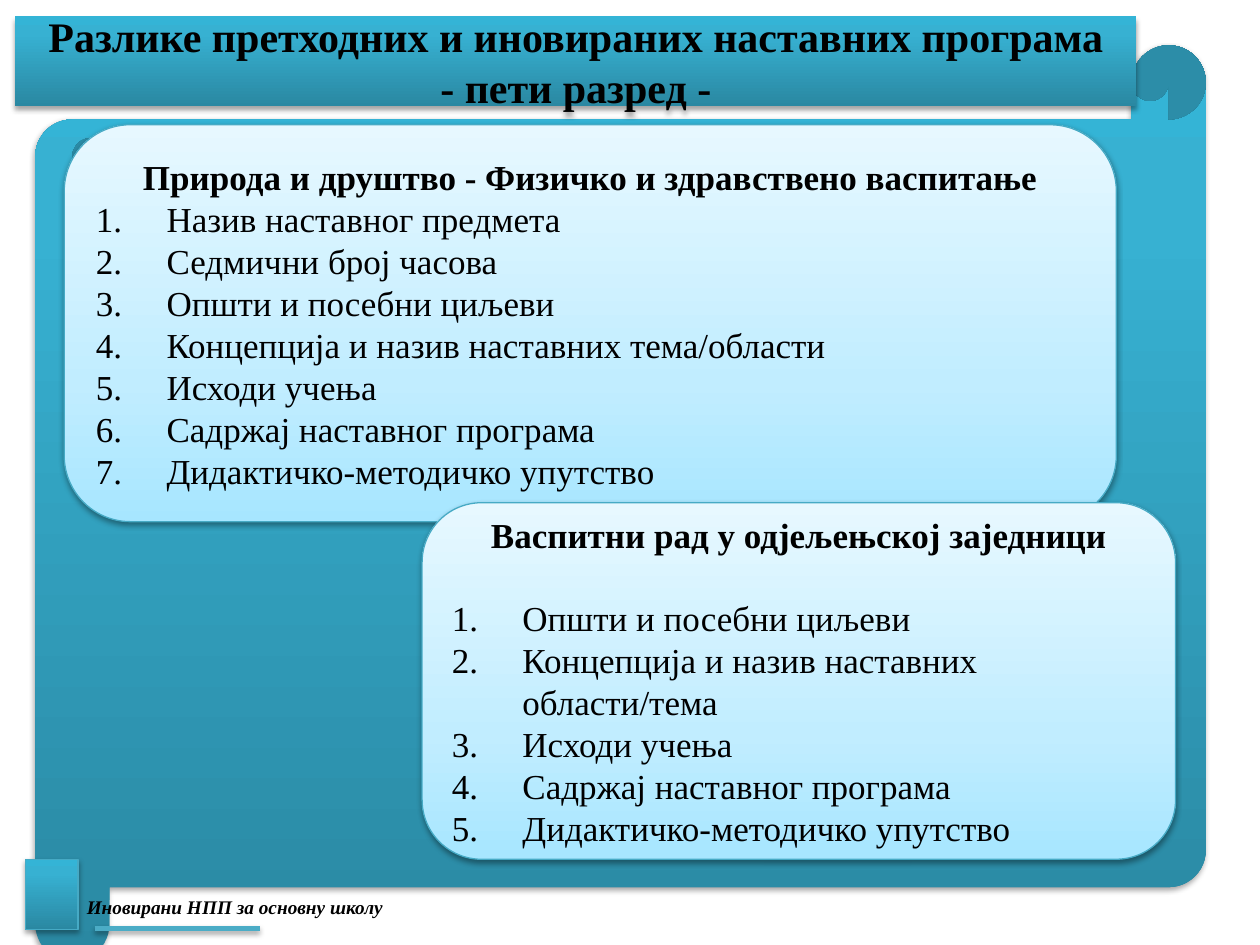
from dataclasses import dataclass

from lxml import etree
from pptx import Presentation
from pptx.dml.color import RGBColor
from pptx.enum.shapes import MSO_CONNECTOR, MSO_SHAPE
from pptx.enum.text import MSO_ANCHOR, MSO_AUTO_SIZE, PP_ALIGN
from pptx.oxml.ns import qn
from pptx.util import Inches, Pt

SCROLL = MSO_SHAPE.HORIZONTAL_SCROLL
RECT = MSO_SHAPE.RECTANGLE
ROUND = MSO_SHAPE.ROUNDED_RECTANGLE
STRAIGHT = MSO_CONNECTOR.STRAIGHT
MIDDLE = MSO_ANCHOR.MIDDLE
NO_FIT = MSO_AUTO_SIZE.NONE
GROW = MSO_AUTO_SIZE.SHAPE_TO_FIT_TEXT
LEFT, CENTER = PP_ALIGN.LEFT, PP_ALIGN.CENTER

FONT = "Times New Roman"
INDENT = Inches(0.56)
COLORS = {
    "text": "000000",
    "edge": "46AAC5",
    "rule": "4BACC6",
    "deep": "2A88A2",
    "mid": "37B1D2",
    "top": "34B4D6",
    "ice": "A7E6FF",
    "pale": "C1EDFF",
    "white": "E7F8FF",
}
TEAL = ((0, "deep"), (80, "mid"), (100, "top"))
LIGHT = ((0, "ice"), (35, "pale"), (100, "white"))


@dataclass
class Card:
    box: tuple[float, float, float, float]
    head: str
    gap: float
    items: list[str]


CARDS = [
    Card((0.51, 0.99, 8.35, 3.15),
         "Природа и друштво - Физичко и здравствено васпитање", 0,
         ["Назив наставног предмета",
          "Седмични број часова",
          "Општи и посебни циљеви",
          "Концепција и назив наставних тема/области",
          "Исходи учења",
          "Садржај наставног програма",
          "Дидактичко-методичко упутство"]),
    Card((3.35, 3.99, 5.98, 2.83),
         "Васпитни рад у одјељењској заједници", 23,
         ["Општи и посебни циљеви",
          "Концепција и назив наставних области/тема",
          "Исходи учења",
          "Садржај наставног програма",
          "Дидактичко-методичко упутство"]),
]


def node(parent, tag: str, **attrs):
    return etree.SubElement(parent, qn(tag), {k: str(v) for k, v in attrs.items()})


def shade(shape, alpha: int = 35, dist: float = 1.8) -> None:
    effects = node(shape._element.spPr, "a:effectLst")
    outer = node(effects, "a:outerShdw", blurRad=Pt(3.1), dist=Pt(dist),
                 dir=5400000, rotWithShape=0)
    color = node(outer, "a:srgbClr", val=COLORS["text"])
    node(color, "a:alpha", val=alpha * 1000)


def blend(shape, stops: tuple) -> None:
    grad = node(shape._element.spPr, "a:gradFill", rotWithShape=1)
    group = node(grad, "a:gsLst")
    for pos, name in stops:
        stop = node(group, "a:gs", pos=pos * 1000)
        node(stop, "a:srgbClr", val=COLORS[name])
    node(grad, "a:lin", ang=16200000, scaled=0)


def edge(shape, name: str, width: float) -> None:
    shape.line.color.rgb = RGBColor.from_string(COLORS[name])
    shape.line.width = Pt(width)


def panel(slide, kind, box: tuple, stops: tuple):
    shape = slide.shapes.add_shape(kind, *map(Inches, box))
    blend(shape, stops)
    return shape


def style(para, size: float, bold: bool = False, italic: bool = False) -> None:
    for run in para.runs:
        font = run.font
        font.name, font.size = FONT, Pt(size)
        font.bold, font.italic = bold, italic
        font.color.rgb = RGBColor.from_string(COLORS["text"])


def draw_card(slide, card: Card) -> None:
    shape = panel(slide, ROUND, card.box, LIGHT)
    edge(shape, "edge", 0.75)
    shade(shape, 38, 1.6)
    frame = shape.text_frame
    frame.word_wrap = True
    frame.vertical_anchor = MIDDLE
    frame.text = "\n".join([card.head, *card.items])
    for i, para in enumerate(frame.paragraphs):
        para.alignment = LEFT if i else CENTER
        style(para, 20, bold=i == 0)
        props = para._p.get_or_add_pPr()
        props.set("marL", str(INDENT))
        props.set("indent", str(-INDENT))
        if i:
            node(props, "a:buFont", typeface="+mj-lt")
            node(props, "a:buAutoNum", type="arabicPeriod")
        elif card.gap:
            para.space_after = Pt(card.gap)


def draw_title(slide) -> None:
    title = slide.shapes.title
    title.left, title.top, title.width, title.height = map(
        Inches, (0.12, 0.13, 8.9, 0.71))
    geom = node(title._element.spPr, "a:prstGeom", prst="flowChartAlternateProcess")
    node(geom, "a:avLst")
    blend(title, TEAL)
    title.line.fill.background()
    shade(title)
    frame = title.text_frame
    frame.auto_size = NO_FIT
    frame.word_wrap = True
    frame.vertical_anchor = MIDDLE
    para = frame.paragraphs[0]
    para.text = "Разлике претходних и иновираних наставних програма\v- пети разред -"
    para.alignment = CENTER
    style(para, 24, bold=True)


def draw_foot(slide) -> None:
    block = panel(slide, RECT, (0.2, 6.82, 0.42, 0.56), TEAL)
    edge(block, "edge", 0.75)
    shade(block)
    note = slide.shapes.add_textbox(*map(Inches, (0.59, 7.06, 2.68, 0.29)))
    frame = note.text_frame
    frame.word_wrap = True
    frame.auto_size = GROW
    frame.text = "Иновирани НПП за основну школу"
    style(frame.paragraphs[0], 11, bold=True, italic=True)
    rule = slide.shapes.add_connector(STRAIGHT, *map(Inches, (0.75, 7.37, 2.06, 7.37)))
    edge(rule, "rule", 3)
    shade(rule)


def main() -> None:
    deck = Presentation()
    deck.slide_width, deck.slide_height = Inches(10), Inches(7.5)
    slide = deck.slides.add_slide(deck.slide_layouts[5])
    scroll = panel(slide, SCROLL, (0.28, 0.36, 9.29, 7.27), TEAL)
    scroll.adjustments[0] = 0.081
    scroll.line.fill.background()
    shade(scroll)
    slide.shapes.title._element.addprevious(scroll._element)
    draw_title(slide)
    draw_foot(slide)
    for card in CARDS:
        draw_card(slide, card)
    deck.save("out.pptx")


if __name__ == "__main__":
    main()
